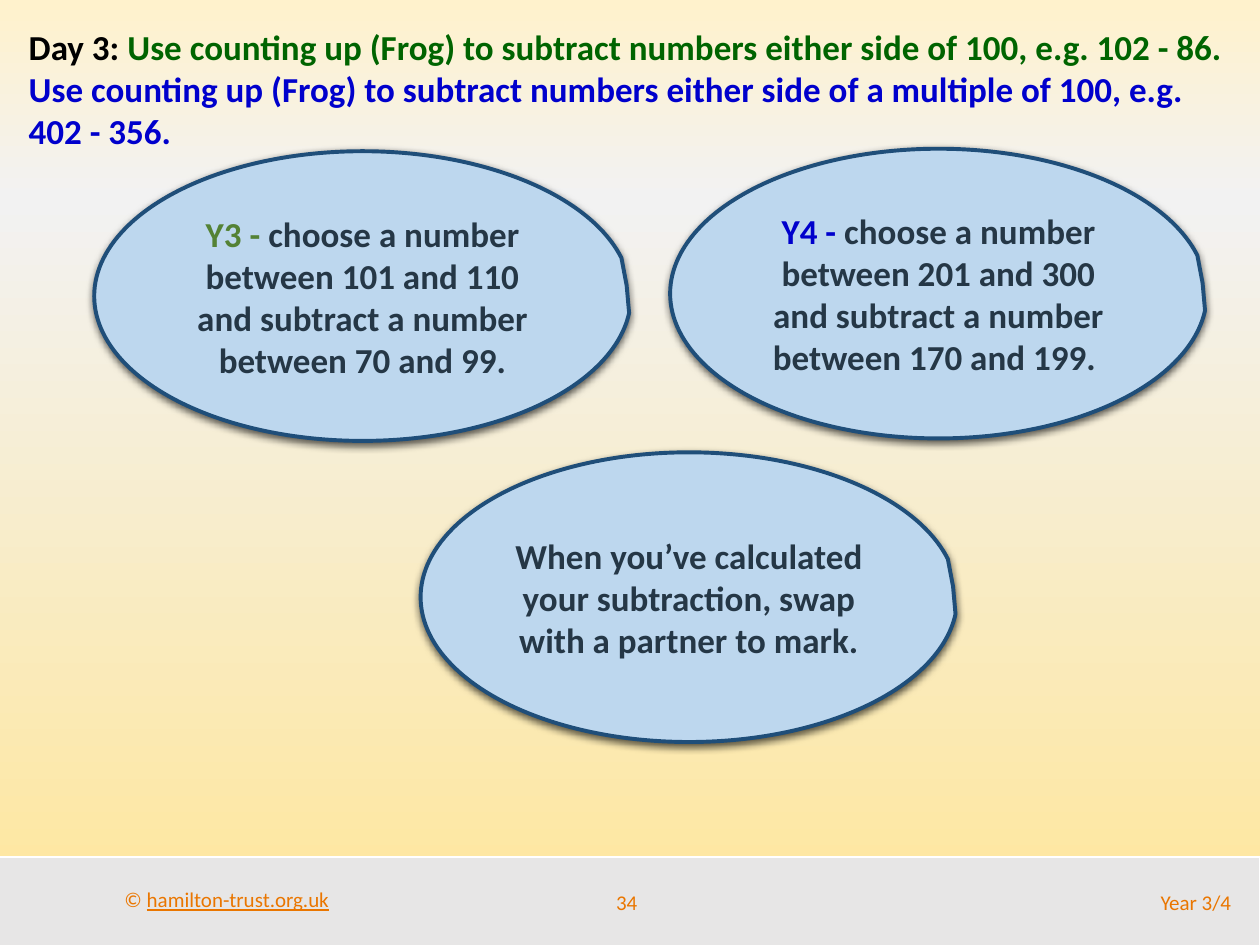
from copy import deepcopy
from lxml.etree import SubElement as Sub
from pptx import Presentation
from pptx.dml.color import RGBColor as RGB
from pptx.enum.shapes import MSO_SHAPE as Shape
from pptx.enum.text import MSO_ANCHOR as Anchor, PP_ALIGN as Align
from pptx.oxml.ns import qn
from pptx.util import Cm, Pt

CREAM = RGB(0xFF, 0xF2, 0xCC)
PALE = RGB(0xF2, 0xF2, 0xF2)
GOLD = RGB(0xFF, 0xE6, 0x99)
GREY = RGB(0xE7, 0xE6, 0xE6)
WHITE = RGB(0xFF, 0xFF, 0xFF)
BLACK = RGB(0, 0, 0)
ORANGE = RGB(0xEA, 0x76, 0x00)
GREEN = RGB(0x00, 0x64, 0x00)
BLUE = RGB(0x00, 0x00, 0xCC)
MOSS = RGB(0x54, 0x82, 0x35)
SKY = RGB(0xBD, 0xD7, 0xEE)
NAVY = RGB(0x1F, 0x4E, 0x79)
SLATE = RGB(0x25, 0x37, 0x46)


def write(frame, lines, size, align=Align.LEFT, anchor=Anchor.MIDDLE, bold=False):
    frame.word_wrap = True
    frame.vertical_anchor = anchor
    for i, line in enumerate(lines):
        para = frame.add_paragraph() if i else frame.paragraphs[0]
        para.alignment = align
        for text, color in line:
            run = para.add_run()
            run.text = text
            font = run.font
            font.name, font.size, font.bold = "Calibri", Pt(size), bold
            font.color.rgb = color


def draw(kind, left, top, width, height, fill, line, weight):
    shape = slide.shapes.add_shape(kind, Cm(left), Cm(top), Cm(width), Cm(height))
    shape.shadow.inherit = False
    shape.fill.solid()
    shape.fill.fore_color.rgb = fill
    shape.line.color.rgb = line
    shape.line.width = Pt(weight)
    return shape


deck = Presentation()
deck.slide_width, deck.slide_height = Cm(25.4), Cm(19.05)
slide = deck.slides.add_slide(deck.slide_layouts[6])

back = slide.background.fill
back.gradient()
back.gradient_angle = 270
stops = slide.element.find(".//" + qn("a:gsLst"))
stops.append(deepcopy(stops[0]))
for stop, color, place in zip(back.gradient_stops, (CREAM, PALE, GOLD), (0, 0.21, 1)):
    stop.color.rgb = color
    stop.position = place

draw(Shape.RECTANGLE, -0.15, 17.27, 25.55, 1.83, GREY, WHITE, 1)

credit = slide.shapes.add_textbox(Cm(2.26), Cm(17.75), Cm(4.67), Cm(0.76)).text_frame
write(credit, [[("© ", ORANGE), ("hamilton-trust.org.uk", ORANGE)]], 12, anchor=Anchor.TOP)
credit.word_wrap = False
credit.paragraphs[0].runs[1].font.underline = True

for text, left, width, align in (
    ("34", 11.63, 2.01, Align.CENTER),
    ("Year 3/4", 14.73, 10.34, Align.RIGHT),
):
    box = slide.shapes.add_textbox(Cm(left), Cm(17.68), Cm(width), Cm(1.02))
    write(box.text_frame, [[(text, ORANGE)]], 12, align)

title = slide.shapes.add_textbox(Cm(0.33), Cm(0.38), Cm(24.82), Cm(2.82))
write(title.text_frame, [
    [("Day 3: ", BLACK),
     ("Use counting up (Frog) to subtract numbers either side of 100, e.g. 102 - 86.", GREEN)],
    [("Use counting up (Frog) to subtract numbers either side of a multiple of 100, "
      "e.g. 402 - 356.", BLUE)],
], 20, anchor=Anchor.TOP, bold=True)

tasks = (
    (1.9, 3.05, [("Y3 - ", MOSS),
                 ("choose a number between 101 and 110 and subtract a number "
                  "between 70 and 99.", SLATE)]),
    (13.51, 3, [("Y4 - ", BLUE),
                ("choose a number between 201 and 300 and subtract a number "
                 "between 170 and 199. ", SLATE)]),
    (8.48, 9.12, [("When you’ve calculated your subtraction, swap with a partner "
                   "to mark.", SLATE)]),
)
for left, top, line in tasks:
    bubble = draw(Shape.OVAL_CALLOUT, left, top, 10.82, 5.84, SKY, NAVY, 2.25)
    bubble.adjustments[0] = 0.492
    bubble.adjustments[1] = -0.037
    effects = bubble.element.spPr.find(qn("a:effectLst"))
    shade = Sub(effects, qn("a:outerShdw"), blurRad=str(Pt(4.5)), dist=str(Pt(1.5)),
                dir="5400000", algn="ctr", rotWithShape="0")
    tint = Sub(shade, qn("a:srgbClr"), val=str(BLACK))
    Sub(tint, qn("a:alpha"), val="63000")
    write(bubble.text_frame, [line], 20, Align.CENTER, bold=True)

deck.save("out.pptx")
